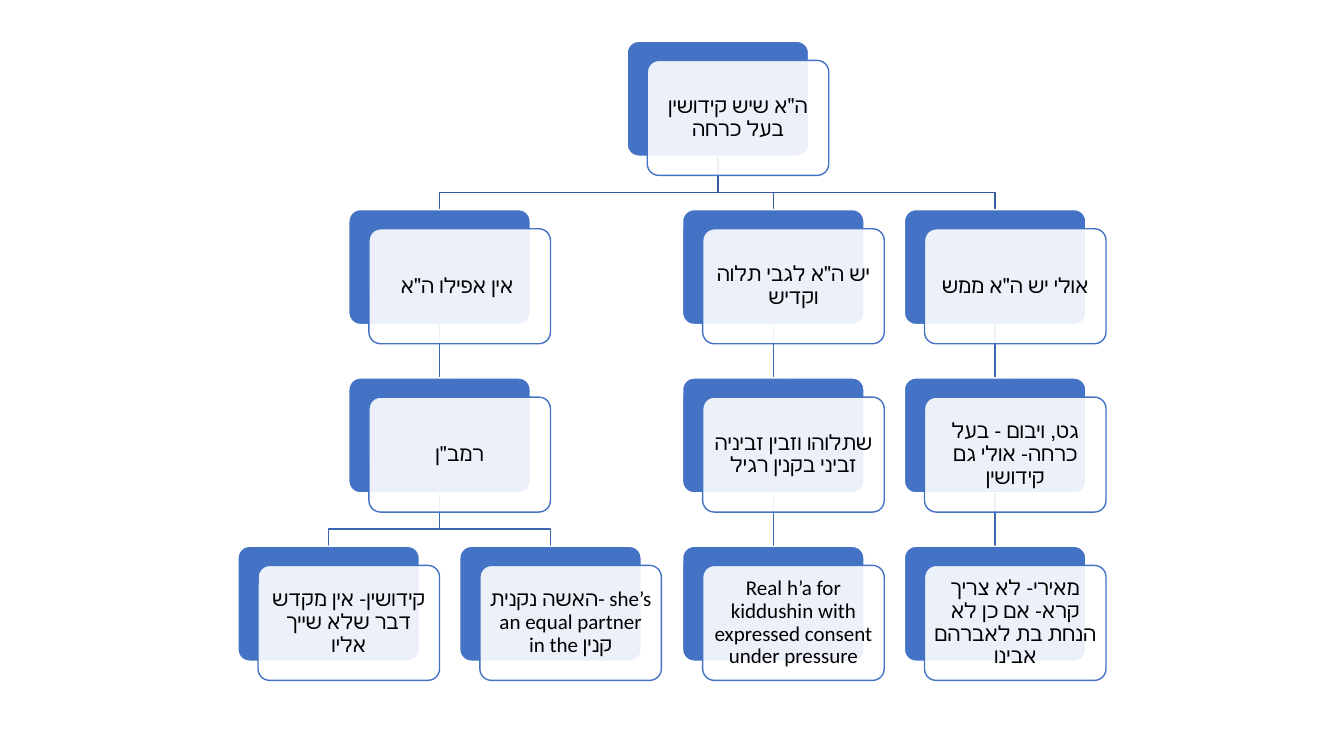
from dataclasses import dataclass

from lxml import etree
from pptx import Presentation
from pptx.dml.color import RGBColor
from pptx.enum.shapes import MSO_CONNECTOR, MSO_SHAPE
from pptx.enum.text import MSO_ANCHOR, PP_ALIGN
from pptx.oxml.ns import qn
from pptx.util import Emu, Pt

LINE = MSO_CONNECTOR.STRAIGHT
CARD = MSO_SHAPE.ROUNDED_RECTANGLE
MIDDLE = MSO_ANCHOR.MIDDLE
CENTER = PP_ALIGN.CENTER

SCALE = 9144  # EMU in one px, 100 px to the inch
COLORS = {
    "blue": "4472C4",
    "white": "FFFFFF",
    "black": "000000",
    "root": "365B9D",
    "link": "3E67B2",
}
FONT = "Calibri"

WIDTH, HEIGHT = 180, 114
LEFT, TOP = 236, 41
COL, ROW = 220.4, 167
SHIFT_X, SHIFT_Y = 20, 19
INSET = 6
ELBOW = 36


@dataclass(frozen=True)
class Node:
    text: str
    col: float
    row: int
    parent: str = ""

    @property
    def x(self) -> int:
        return LEFT + round(self.col * COL)

    @property
    def y(self) -> int:
        return TOP + self.row * ROW

    @property
    def mid(self) -> int:
        return self.x + WIDTH // 2


NODES = {
    "root": Node('ה"א שיש קידושין בעל כרחה', 1.75, 0),
    "none": Node('אין אפילו ה"א ', 0.5, 1, "root"),
    "ramban": Node('רמב"ן', 0.5, 2, "none"),
    "object": Node("קידושין- אין מקדש דבר שלא שייך אליו", 0, 3, "ramban"),
    "equal": Node("האשה נקנית- she’s an equal partner in the קנין", 1, 3, "ramban"),
    "forced": Node('יש ה"א לגבי תלוה וקדיש', 2, 1, "root"),
    "sale": Node("שתלוהו וזבין זביניה זביני בקנין רגיל", 2, 2, "forced"),
    "consent": Node(
        "Real h’a for kiddushin with expressed consent under pressure", 2, 3, "sale"
    ),
    "maybe": Node('אולי יש ה"א ממש', 3, 1, "root"),
    "get": Node("גט, ויבום - בעל כרחה- אולי גם קידושין", 3, 2, "maybe"),
    "meiri": Node("מאירי- לא צריך קרא- אם כן לא הנחת בת לאברהם אבינו", 3, 3, "get"),
}


def px(size: int) -> Emu:
    return Emu(size * SCALE)


def rgb(name: str) -> RGBColor:
    return RGBColor.from_string(COLORS[name])


def stroke(shape, color: str) -> None:
    shape.line.color.rgb = rgb(color)
    shape.line.width = Pt(1)


def link(shapes, top: Node, child: Node) -> None:
    """Join a parent to its child, straight down or through an elbow."""
    color = "link" if top.parent else "root"
    start = top.y + HEIGHT
    if top.mid == child.mid:
        line = shapes.add_connector(
            LINE, px(top.mid), px(start), px(child.mid), px(child.y)
        )
        etree.SubElement(line._element.spPr, qn("a:effectLst"))
    else:
        bend = start + ELBOW
        path = shapes.build_freeform(top.mid, start, scale=SCALE)
        path.add_line_segments(
            [(top.mid, bend), (child.mid, bend), (child.mid, child.y)], close=False
        )
        line = path.convert_to_shape()
        line.fill.background()
        line.shadow.inherit = False
    stroke(line, color)


def card(shapes, x: int, y: int, fill: str, edge: str):
    shape = shapes.add_shape(CARD, px(x), px(y), px(WIDTH), px(HEIGHT))
    shape.adjustments[0] = 0.1
    shape.shadow.inherit = False
    shape.fill.solid()
    shape.fill.fore_color.rgb = rgb(fill)
    stroke(shape, edge)
    return shape


def fade(shape, share: int) -> None:
    """Set the opacity of a solid fill, in percent."""
    color = shape._element.spPr.find(qn("a:solidFill"))[0]
    etree.SubElement(color, qn("a:alpha"), val=str(share * 1000))


def label(shape, text: str) -> None:
    frame = shape.text_frame
    frame.text = text
    frame.word_wrap = True
    frame.vertical_anchor = MIDDLE
    frame.margin_left = frame.margin_right = px(INSET)
    frame.margin_top = frame.margin_bottom = px(INSET)
    para = frame.paragraphs[0]
    para.alignment = CENTER
    para.line_spacing = 0.9
    font = para.runs[0].font
    font.name = FONT
    font.size = Pt(15)
    font.color.rgb = rgb("black")


def draw(shapes, node: Node) -> None:
    card(shapes, node.x, node.y, "blue", "white")
    front = card(shapes, node.x + SHIFT_X, node.y + SHIFT_Y, "white", "blue")
    fade(front, 90)
    label(front, node.text)


def main() -> None:
    deck = Presentation()
    deck.slide_width, deck.slide_height = px(1333), px(750)
    shapes = deck.slides.add_slide(deck.slide_layouts[6]).shapes
    for node in reversed(NODES.values()):
        if node.parent:
            link(shapes, NODES[node.parent], node)
    for node in NODES.values():
        draw(shapes, node)
    deck.save("out.pptx")


if __name__ == "__main__":
    main()
